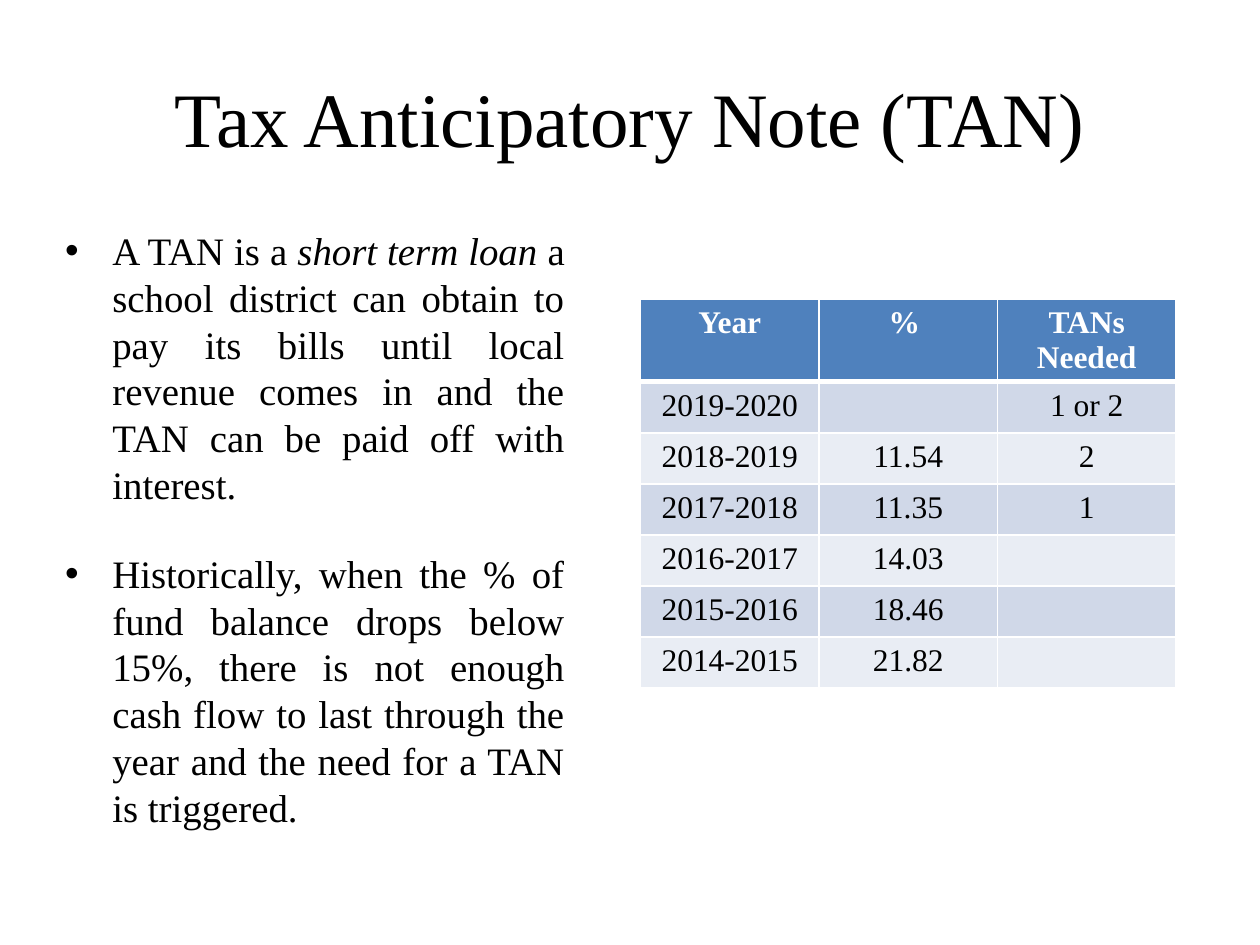
from lxml.etree import SubElement
from pptx import Presentation
from pptx.dml.color import RGBColor as RGB
from pptx.enum.text import MSO_ANCHOR as ANCHOR, MSO_AUTO_SIZE as FIT, PP_ALIGN as ALIGN
from pptx.oxml.ns import qn
from pptx.util import Pt

COLORS = {"text": "000000", "white": "FFFFFF", "header": "4F81BD",
          "odd": "D0D8E8", "even": "E9EDF4"}
BULLETS = [
    [("A TAN is a ", False), ("short term loan ", True),
     ("a school district can obtain to pay its bills until local revenue "
      "comes in and the TAN can be paid off with interest.", False)],
    [("Historically, when the % of fund balance drops below 15%, there is not "
      "enough cash flow to last through the year and the need for a TAN is "
      "triggered.", False)],
]
ROWS = [
    ("Year", "% ", "TANs Needed"),
    ("2019-2020", "", "1 or 2"),
    ("2018-2019", "11.54", "2"),
    ("2017-2018", "11.35", "1"),
    ("2016-2017", "14.03", ""),
    ("2015-2016", "18.46", ""),
    ("2014-2015", "21.82", ""),
]


class Deck:
    """Holds the text style and the current slide, and adds its elements."""

    def __init__(self, prs, font):
        self.font = font
        self.s = prs.slides.add_slide(prs.slide_layouts[1])

    def apply(self, obj, **values):
        for name, value in values.items():
            setattr(obj, name, value)

    def run(self, p, text, size, color="text", **values):
        r = p.add_run()
        r.text = text
        self.apply(r.font, name=self.font, size=Pt(size), **values)
        r.font.color.rgb = RGB.from_string(COLORS[color])

    def place(self, sp, box, anchor):
        left, top, width, height = map(Pt, box)
        self.apply(sp, left=left, top=top, width=width, height=height)
        tf = sp.text_frame
        self.apply(tf, word_wrap=True, auto_size=FIT.NONE, vertical_anchor=anchor)
        return tf

    def title(self, text, box):
        p = self.place(self.s.shapes.title, box, ANCHOR.MIDDLE).paragraphs[0]
        p.alignment = ALIGN.CENTER
        self.run(p, text, 44)

    def bullets(self, items, box, size, indent, leading, gap):
        tf = self.place(self.s.placeholders[1], box, ANCHOR.TOP)
        for i, item in enumerate(items):
            p = tf.add_paragraph() if i else tf.paragraphs[0]
            self.apply(p, alignment=ALIGN.JUSTIFY, line_spacing=Pt(leading),
                       space_before=Pt(0), space_after=Pt(gap))
            pPr = p._p.get_or_add_pPr()
            pPr.set("marL", str(Pt(indent)))
            pPr.set("indent", str(-Pt(indent)))
            SubElement(pPr, qn("a:buFont")).set("typeface", "Arial")
            SubElement(pPr, qn("a:buChar")).set("char", "•")
            for text, italic in item:
                self.run(p, text, size, italic=italic)

    def borders(self, cell, widths):
        tcPr = cell._tc.get_or_add_tcPr()
        for i, (side, width) in enumerate(widths.items()):
            ln = tcPr.makeelement(qn(f"a:ln{side}"), {"w": str(Pt(width))})
            fill = SubElement(ln, qn("a:solidFill"))
            SubElement(fill, qn("a:srgbClr")).set("val", COLORS["white"])
            tcPr.insert(i, ln)

    def table(self, rows, left, top, col_width, header_height, row_height):
        cols = len(rows[0])
        height = header_height + row_height * (len(rows) - 1)
        tbl = self.s.shapes.add_table(len(rows), cols, Pt(left), Pt(top),
                                      Pt(col_width * cols), Pt(height)).table
        for i, row in enumerate(rows):
            head = i == 0
            tbl.rows[i].height = Pt(header_height if head else row_height)
            fill = "header" if head else ("even", "odd")[i % 2]
            for j, text in enumerate(row):
                cell = tbl.cell(i, j)
                cell.fill.solid()
                cell.fill.fore_color.rgb = RGB.from_string(COLORS[fill])
                self.borders(cell, {"L": 1, "R": 1, "T": 3 if i == 1 else 1,
                                    "B": 3 if head else 1})
                p = cell.text_frame.paragraphs[0]
                p.alignment = ALIGN.CENTER
                if text:
                    self.run(p, text, 18, "white" if head else "text", bold=head)


def main():
    prs = Presentation()
    prs.slide_width, prs.slide_height = Pt(720), Pt(540)
    deck = Deck(prs, "Times New Roman")
    deck.title("Tax Anticipatory Note (TAN)", (36, 21.6, 648, 90))
    deck.bullets(BULLETS, (30, 126, 300, 362), size=22.2, indent=27,
                 leading=26.7, gap=24.2)
    deck.table(ROWS, left=366, top=171, col_width=102,
               header_height=46.4, row_height=29.2)
    prs.save("out.pptx")


if __name__ == "__main__":
    main()
